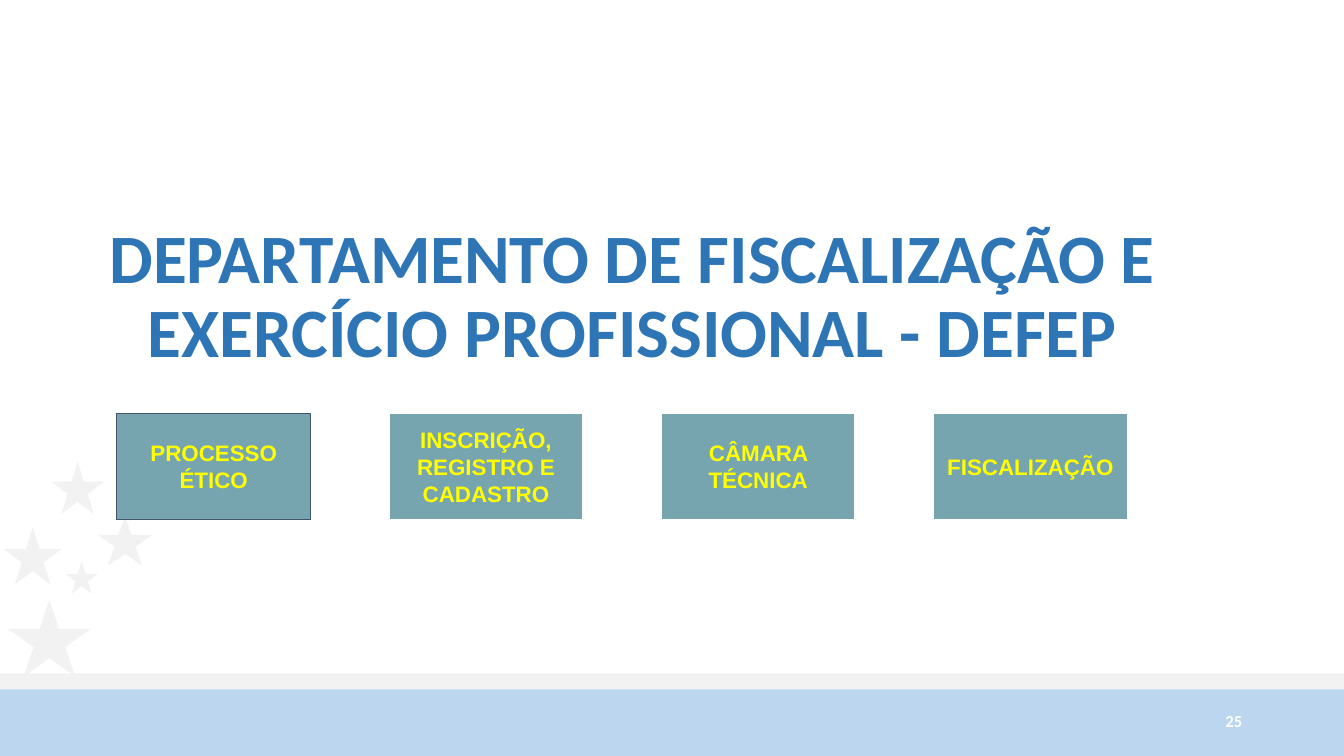
"""Build the DEFEP department slide with its four sectors."""
from dataclasses import dataclass

from pptx import Presentation
from pptx import util as u
from pptx.dml.color import RGBColor
from pptx.enum import shapes, text


@dataclass(frozen=True)
class Theme:
    blue: str = "2E75B5"
    band: str = "BBD6EE"
    grey: str = "F2F2F2"
    teal: str = "76A5AF"
    navy: str = "44546A"
    yellow: str = "FFFF00"
    white: str = "FFFFFF"
    title_size: float = 49.5
    box_size: float = 16
    number_size: float = 12


def write(sp, content, *, font, size, color, align, anchor, inset=0.05, spacing=None):
    tf = sp.text_frame
    tf.word_wrap = True
    tf.auto_size = text.MSO_AUTO_SIZE.NONE
    tf.vertical_anchor = anchor
    tf.margin_left = tf.margin_right = u.Inches(0.1)
    tf.margin_top = tf.margin_bottom = u.Inches(inset)
    p = tf.paragraphs[0]
    p.alignment = align
    p.line_spacing = spacing
    r = p.add_run()
    r.text = content
    r.font.name = font
    r.font.size = u.Pt(size)
    r.font.bold = True
    r.font.color.rgb = RGBColor.from_string(color)


def add_block(s, kind, place, fill, line=None):
    sp = s.shapes.add_shape(kind, *map(u.Inches, place))
    sp.shadow.inherit = False
    sp.fill.solid()
    sp.fill.fore_color.rgb = RGBColor.from_string(fill)
    if line:
        sp.line.color.rgb = RGBColor.from_string(line)
        sp.line.width = u.Pt(0.75)
    else:
        sp.line.fill.background()
    return sp


theme = Theme()
RECT = shapes.MSO_SHAPE.RECTANGLE
STAR = shapes.MSO_SHAPE.STAR_5_POINT
ALIGN = text.PP_ALIGN
ANCHOR = text.MSO_ANCHOR

prs = Presentation()
prs.slide_width = u.Inches(13.33)
prs.slide_height = u.Inches(7.5)
s = prs.slides.add_slide(prs.slide_layouts[5])

add_block(s, RECT, (0, 6.82, 13.33, 0.68), theme.band)
add_block(s, RECT, (0, 6.68, 13.33, 0.16), theme.grey)

stars = [
    (0.04, 5.23, 0.57, 0.57),
    (0.65, 5.57, 0.32, 0.32),
    (0.08, 5.95, 0.82, 0.76),
    (0.51, 4.58, 0.52, 0.52),
    (0.97, 5.12, 0.54, 0.49),
]
for place in stars:
    add_block(s, STAR, place, theme.grey)

title = s.shapes.title
title.left, title.top = u.Inches(0.86), u.Inches(1.8)
title.width, title.height = u.Inches(10.82), u.Inches(1.95)
write(title, "DEPARTAMENTO DE FISCALIZAÇÃO E EXERCÍCIO PROFISSIONAL - DEFEP",
      font="Calibri", size=theme.title_size, color=theme.blue,
      align=ALIGN.CENTER, anchor=ANCHOR.BOTTOM, spacing=0.9)

number = s.shapes.add_textbox(*map(u.Inches, (9.42, 6.95, 3, 0.4)))
write(number, "25", font="Calibri", size=theme.number_size, color=theme.white,
      align=ALIGN.RIGHT, anchor=ANCHOR.MIDDLE)

sectors = [
    ("PROCESSO ÉTICO", theme.navy),
    ("INSCRIÇÃO, REGISTRO E CADASTRO", theme.white),
    ("CÂMARA TÉCNICA", theme.white),
    ("FISCALIZAÇÃO", theme.white),
]
for i, (name, outline) in enumerate(sectors):
    box = add_block(s, RECT, (1.16 + 2.7 * i, 4.1, 1.92, 1.05), theme.teal, outline)
    write(box, name, font="Arial", size=theme.box_size, color=theme.yellow,
          align=ALIGN.CENTER, anchor=ANCHOR.MIDDLE, inset=0.1)

prs.save("out.pptx")
